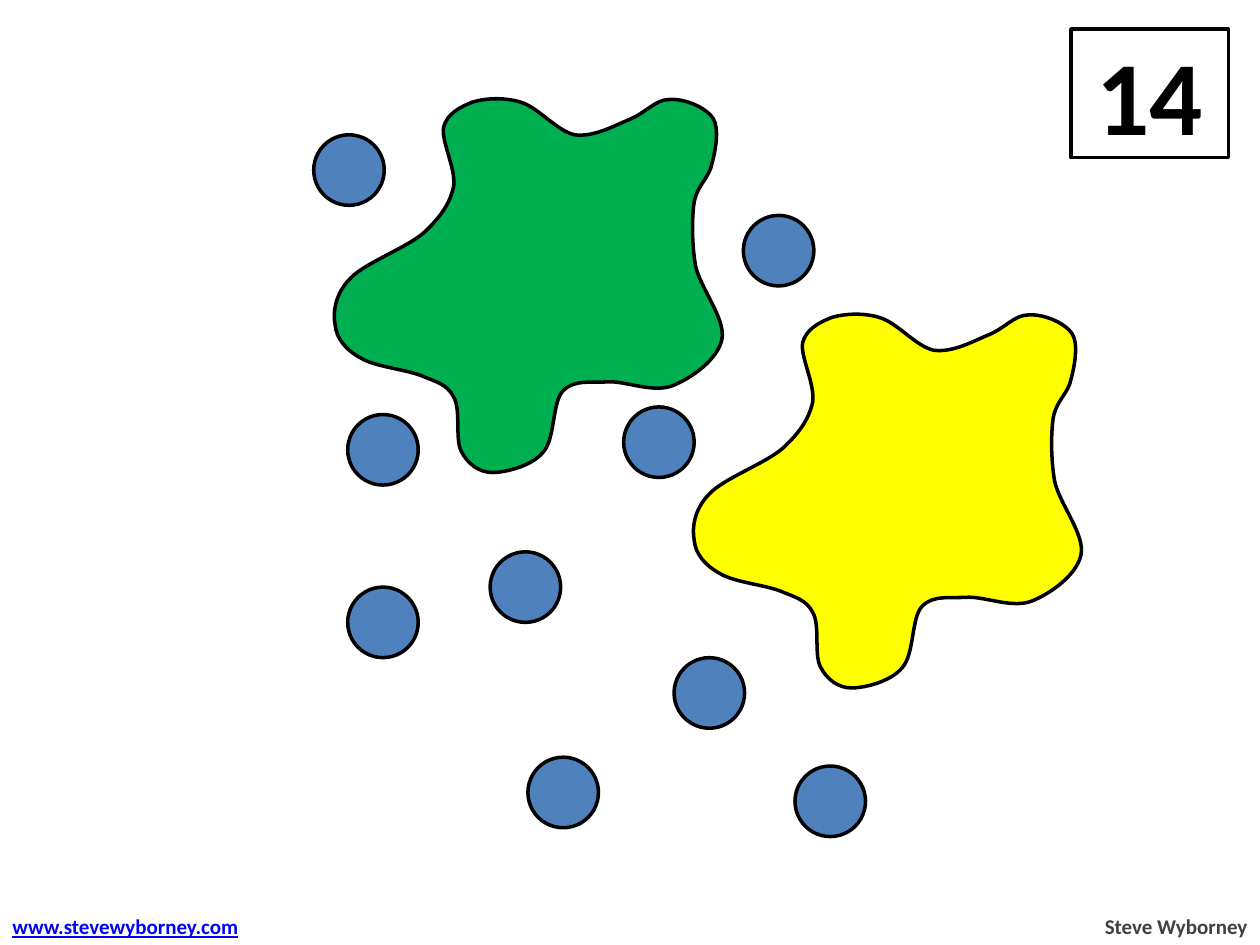
import pptx
import pptx.dml.color
import pptx.enum.shapes
import pptx.enum.text
import pptx.oxml.ns
import pptx.util
from lxml import etree
from pptx.util import Inches

MSO_SHAPE = pptx.enum.shapes.MSO_SHAPE
PP_ALIGN = pptx.enum.text.PP_ALIGN

FONT = "Calibri"
BLACK, WHITE, GREY = "000000", "FFFFFF", "404040"
LINK_BLUE, DOT_BLUE = "0000FF", "4F81BD"

COUNT = "14"
AUTHOR = "Steve Wyborney"
WEBSITE = "www.stevewyborney.com"

DOT_SIZE = 0.56
DOTS = [
    (2.49, 1.07), (5.35, 5.22), (4.95, 3.23),
    (5.9, 1.71), (6.31, 6.08), (2.76, 4.66),
    (3.89, 4.38), (2.76, 3.29), (4.19, 6.01),
]

# Each curve of the blob: two control points, then its end point.
BLOB_START = (2.86, 2.84)
BLOB_CURVES = [
    ((2.75, 2.78), (2.67, 2.69), (2.66, 2.58)),
    ((2.64, 2.48), (2.66, 2.33), (2.78, 2.21)),
    ((2.89, 2.09), (3.22, 1.97), (3.36, 1.85)),
    ((3.49, 1.73), (3.57, 1.62), (3.6, 1.48)),
    ((3.62, 1.34), (3.5, 1.12), (3.52, 1.01)),
    ((3.55, 0.9), (3.65, 0.85), (3.75, 0.81)),
    ((3.85, 0.78), (4, 0.77), (4.13, 0.81)),
    ((4.27, 0.85), (4.42, 1.04), (4.56, 1.07)),
    ((4.71, 1.09), (4.87, 1), (4.99, 0.95)),
    ((5.12, 0.9), (5.2, 0.79), (5.31, 0.79)),
    ((5.43, 0.78), (5.6, 0.85), (5.66, 0.94)),
    ((5.71, 1.02), (5.68, 1.19), (5.65, 1.3)),
    ((5.63, 1.41), (5.54, 1.46), (5.51, 1.6)),
    ((5.49, 1.73), (5.49, 1.93), (5.52, 2.11)),
    ((5.56, 2.29), (5.76, 2.53), (5.73, 2.69)),
    ((5.7, 2.85), (5.49, 3), (5.34, 3.06)),
    ((5.19, 3.12), (4.98, 3.03), (4.84, 3.03)),
    ((4.69, 3.04), (4.56, 3.01), (4.47, 3.1)),
    ((4.38, 3.19), (4.41, 3.48), (4.31, 3.59)),
    ((4.22, 3.7), (4.01, 3.75), (3.91, 3.75)),
    ((3.8, 3.75), (3.71, 3.68), (3.66, 3.58)),
    ((3.61, 3.48), (3.66, 3.25), (3.6, 3.15)),
    ((3.55, 3.05), (3.46, 3.03), (3.34, 2.98)),
    ((3.21, 2.93), (2.97, 2.91), BLOB_START),
]
# Fill colour and shift to the right and down.
BLOBS = [("00B050", 0, 0), ("FFFF00", 2.85, 1.71)]


def rgb(color):
    return pptx.dml.color.RGBColor.from_string(color)


def paint(shape, color):
    """Give a shape its fill and the black outline, without a shadow."""
    shape.shadow.inherit = False
    shape.fill.solid()
    shape.fill.fore_color.rgb = rgb(color)
    shape.line.color.rgb = rgb(BLACK)
    shape.line.width = pptx.util.Pt(2)


def add_shape(slide, kind, left, top, width, height, color):
    shape = slide.shapes.add_shape(
        kind, Inches(left), Inches(top), Inches(width), Inches(height))
    paint(shape, color)
    return shape


def write(shape, text, size=12, color=GREY, align=PP_ALIGN.LEFT, underline=None):
    paragraph = shape.text_frame.paragraphs[0]
    paragraph.alignment = align
    run = paragraph.add_run()
    run.text = text
    run.font.name = FONT
    run.font.size = pptx.util.Pt(size)
    run.font.bold = True
    run.font.underline = underline
    run.font.color.rgb = rgb(color)


def add_footer(slide, text, left, width, **text_format):
    box = slide.shapes.add_textbox(
        Inches(left), Inches(7.2), Inches(width), Inches(0.3))
    box.text_frame.word_wrap = False
    write(box, text, **text_format)


def add_blob(slide, color, shift_x, shift_y):
    """Draw the outline through all points, then turn each three lines into a curve."""
    def place(point):
        return Inches(point[0] + shift_x), Inches(point[1] + shift_y)

    builder = slide.shapes.build_freeform(*place(BLOB_START))
    builder.add_line_segments(
        [place(point) for curve in BLOB_CURVES for point in curve], close=True)
    blob = builder.convert_to_shape()
    paint(blob, color)

    lines = blob._element.xpath(".//a:path/a:lnTo")
    for index in range(0, len(BLOB_CURVES) * 3, 3):
        curve = etree.Element(pptx.oxml.ns.qn("a:cubicBezTo"))
        lines[index].addprevious(curve)
        for line in lines[index:index + 3]:
            curve.append(line[0])
            line.getparent().remove(line)


def main():
    presentation = pptx.Presentation()
    presentation.slide_width = Inches(10)
    presentation.slide_height = Inches(7.5)
    slide = presentation.slides.add_slide(presentation.slide_layouts[6])

    count_box = add_shape(slide, MSO_SHAPE.RECTANGLE, 8.5, 0.23, 1.25, 1.02, WHITE)
    count_box.text_frame.vertical_anchor = pptx.enum.text.MSO_ANCHOR.MIDDLE
    write(count_box, COUNT, size=60, color=BLACK, align=PP_ALIGN.CENTER)

    add_footer(slide, AUTHOR, 8.66, 1.34, align=PP_ALIGN.RIGHT)
    add_footer(slide, WEBSITE, 0, 2.04, color=LINK_BLUE, underline=True)

    for left, top in DOTS:
        add_shape(slide, MSO_SHAPE.OVAL, left, top, DOT_SIZE, DOT_SIZE, DOT_BLUE)
    for color, shift_x, shift_y in BLOBS:
        add_blob(slide, color, shift_x, shift_y)

    presentation.save("out.pptx")


if __name__ == "__main__":
    main()
